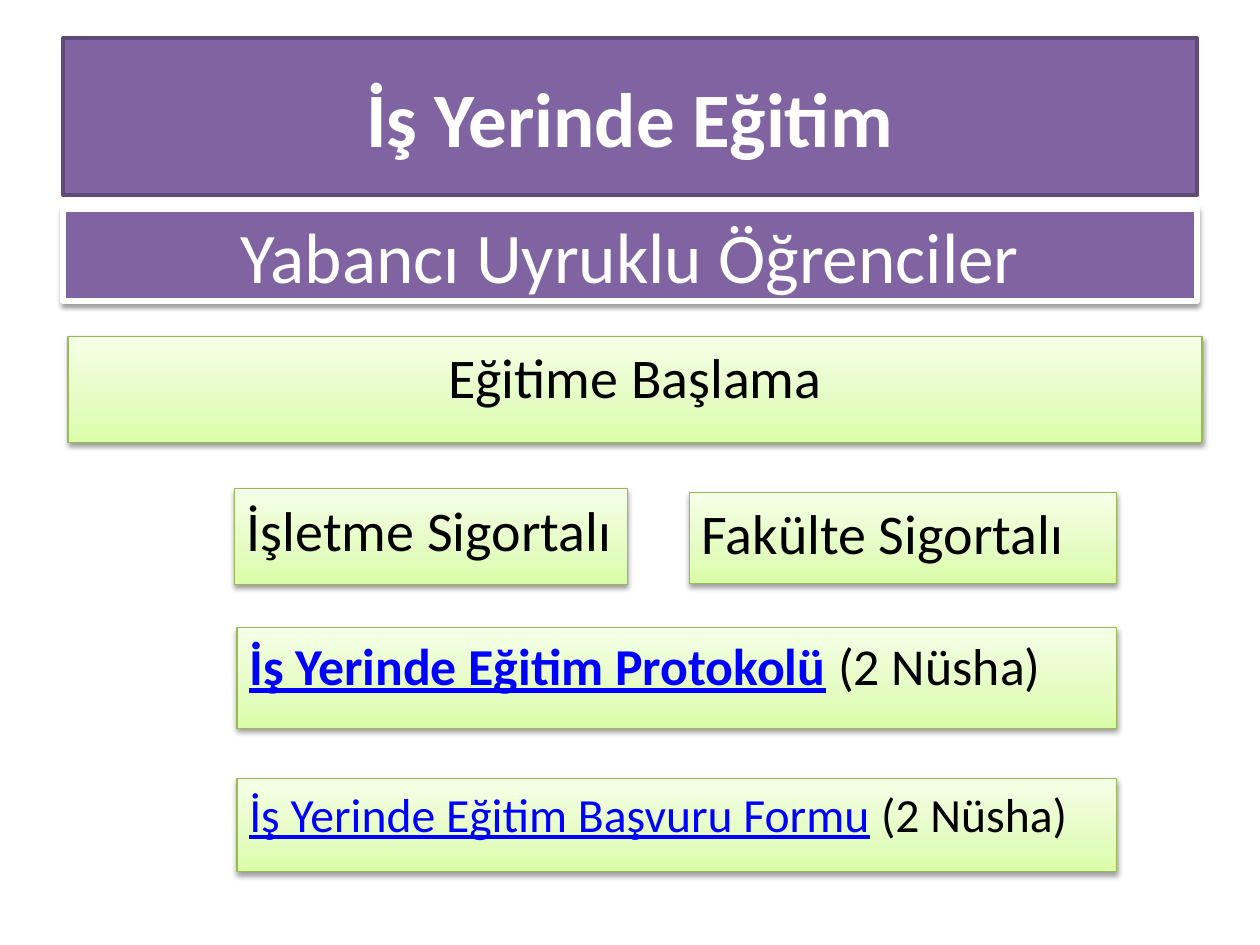
from lxml import etree
from pptx import Presentation
from pptx.dml.color import RGBColor
from pptx.enum.shapes import MSO_SHAPE as Shape
from pptx.enum.text import MSO_ANCHOR as Anchor, MSO_AUTO_SIZE as Fit, PP_ALIGN as Align
from pptx.oxml import parse_xml
from pptx.oxml.ns import nsdecls, qn
from pptx.util import Inches, Pt

COLORS = {
    "purple": "8064A2", "edge": "5F4A78", "white": "FFFFFF", "black": "000000",
    "link": "0000FF", "green": "98B955",
}
STOPS = [(0, "DAFDA7"), (35, "E4FCC2"), (100, "F5FFE7")]


def write(shape, runs, size, align=Align.LEFT, anchor=Anchor.TOP, before=0):
    """Fill a shape with one paragraph of (text, color, bold, underline) runs."""
    frame = shape.text_frame
    frame.word_wrap = True
    frame.auto_size = Fit.NONE
    frame.vertical_anchor = anchor
    para = frame.paragraphs[0]
    para.alignment = align
    para.space_before = Pt(before)
    for text, color, bold, under in runs:
        run = para.add_run()
        run.text = text
        font = run.font
        font.name, font.size = "Calibri", Pt(size)
        font.bold, font.underline = bold, under
        font.color.rgb = RGBColor.from_string(COLORS[color])


def paint(shape, fill, line, width, shadow=True):
    """Set fill (None gives the green gradient), outline and soft shadow."""
    shape.fill.solid()
    if fill:
        shape.fill.fore_color.rgb = RGBColor.from_string(COLORS[fill])
    else:
        stops = "".join(
            f'<a:gs pos="{pos * 1000}"><a:srgbClr val="{color}"/></a:gs>'
            for pos, color in STOPS)
        solid = shape.element.spPr.find(qn("a:solidFill"))
        solid.getparent().replace(solid, parse_xml(
            f'<a:gradFill {nsdecls("a")} rotWithShape="1"><a:gsLst>{stops}</a:gsLst>'
            '<a:lin ang="16200000" scaled="0"/></a:gradFill>'))
    shape.line.color.rgb = RGBColor.from_string(COLORS[line])
    shape.line.width = Pt(width)
    shape.shadow.inherit = False
    if shadow:
        effects = shape.element.spPr.find(qn("a:effectLst"))
        outer = etree.SubElement(effects, qn("a:outerShdw"), blurRad=str(Pt(3.1)),
                                 dist=str(Pt(1.6)), dir="5400000", rotWithShape="0")
        color = etree.SubElement(outer, qn("a:srgbClr"), val=COLORS["black"])
        etree.SubElement(color, qn("a:alpha"), val="38000")


deck = Presentation()
deck.slide_width, deck.slide_height = Inches(10), Inches(7.5)
slide = deck.slides.add_slide(deck.slide_layouts[5])

title = slide.shapes.title
title.left, title.top = Inches(0.5), Inches(0.3)
title.width, title.height = Inches(9), Inches(1.25)
paint(title, "purple", "edge", 2, shadow=False)
write(title, [("İş Yerinde Eğitim", "white", True, False)], 44,
      align=Align.CENTER, anchor=Anchor.MIDDLE)

band = slide.shapes.add_shape(
    Shape.RECTANGLE, Inches(0.5), Inches(1.66), Inches(9), Inches(0.73))
paint(band, "purple", "white", 3)
write(band, [("Yabancı Uyruklu Öğrenciler", "white", False, False)], 40.7,
      align=Align.CENTER, anchor=Anchor.MIDDLE)

boxes = [
    (0.54, 2.67, 9, 0.84, 32, Align.CENTER,
     [("Eğitime Başlama", "black", False, False)]),
    (1.86, 3.88, 3.12, 0.76, 32, Align.LEFT,
     [("İşletme Sigortalı", "black", False, False)]),
    (5.47, 3.91, 3.39, 0.72, 32, Align.LEFT,
     [("Fakülte Sigortalı", "black", False, False)]),
    (1.88, 4.98, 6.98, 0.8, 29.6, Align.LEFT,
     [("İş Yerinde Eğitim Protokolü", "link", True, True),
      (" ", "black", True, False),
      ("(2 Nüsha)", "black", False, False)]),
    (1.88, 6.18, 6.98, 0.74, 27.2, Align.LEFT,
     [("İş Yerinde Eğitim Başvuru Formu", "link", False, True),
      (" (2 Nüsha)", "black", False, False)]),
]
for left, top, width, height, size, align, runs in boxes:
    box = slide.shapes.add_shape(
        Shape.RECTANGLE, Inches(left), Inches(top), Inches(width), Inches(height))
    paint(box, None, "green", 0.75)
    write(box, runs, size, align=align, before=round(size * 0.2, 1))

deck.save("out.pptx")
